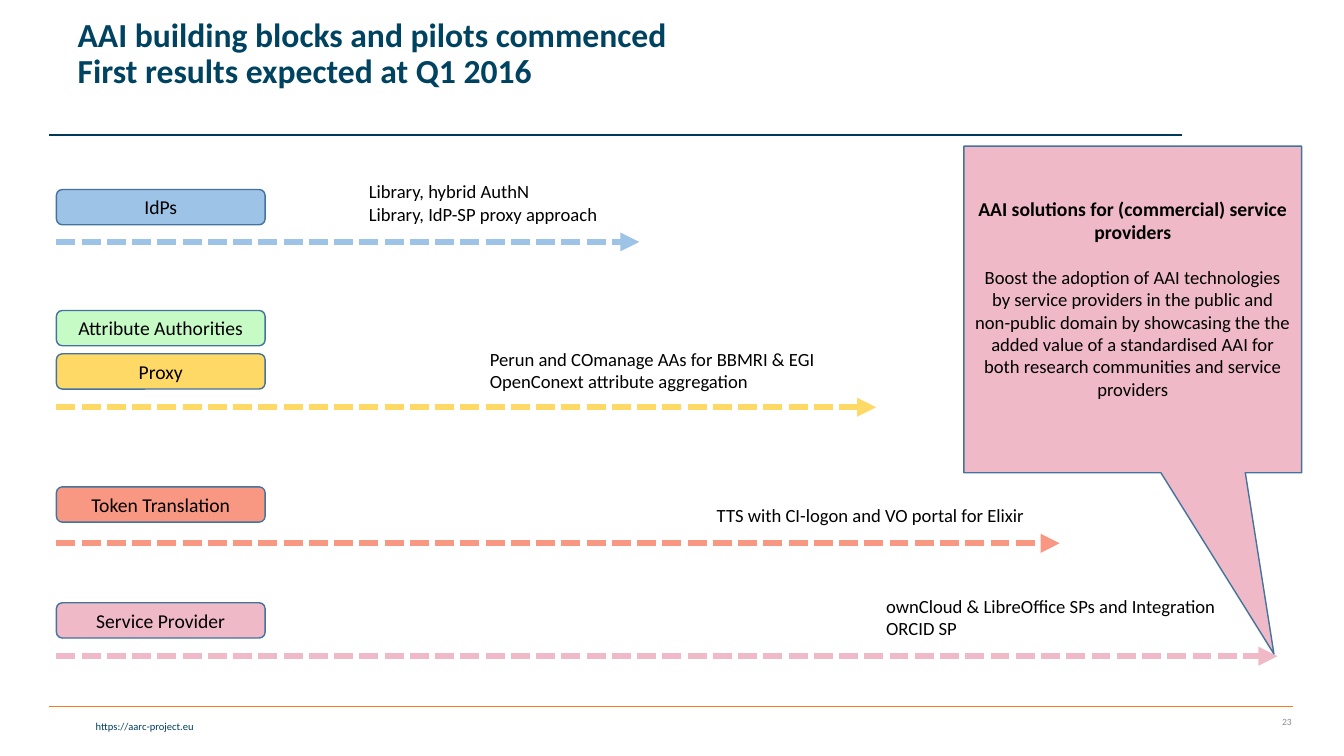
from lxml.etree import SubElement
from pptx import Presentation
from pptx.dml.color import RGBColor
from pptx.enum.dml import MSO_LINE
from pptx.enum.shapes import MSO_CONNECTOR, MSO_SHAPE
from pptx.enum.text import MSO_ANCHOR, PP_ALIGN
from pptx.oxml.ns import qn
from pptx.util import Inches, Pt

COLORS = {
    "navy": "004361", "rule": "003959", "link": "003F5E", "orange": "F57B20",
    "outline": "43739E", "black": "000000", "gray": "8C8C8C", "blue": "9DC3E6",
    "green": "C6FBC6", "yellow": "FFD966", "coral": "F89782", "pink": "F0B9C7",
}
LEFT = 0.56
LABEL_WIDTH, LABEL_HEIGHT = 2.07, 0.35

presentation = Presentation()
presentation.slide_width = Inches(13.33)
presentation.slide_height = Inches(7.5)
slide = presentation.slides.add_slide(presentation.slide_layouts[5])


def write(shape, lines, size, color="black", align=PP_ALIGN.LEFT, bold=False):
    frame = shape.text_frame
    frame.text = "\n".join(lines)
    for paragraph in frame.paragraphs:
        paragraph.alignment = align
        paragraph.font.name = "Calibri"
        paragraph.font.size = Pt(size)
        paragraph.font.bold = bold
        paragraph.font.color.rgb = RGBColor.from_string(COLORS[color])
    return frame


def add_line(left, right, top, color, width):
    line = slide.shapes.add_connector(
        MSO_CONNECTOR.STRAIGHT, Inches(left), Inches(top), Inches(right), Inches(top))
    line.line.color.rgb = RGBColor.from_string(COLORS[color])
    line.line.width = Pt(width)
    SubElement(line._element.spPr, qn("a:effectLst"))
    return line


# Rules above and below the content
add_line(0.49, 12.82, 7.01, "orange", 1)
add_line(0.49, 11.72, 1.34, "rule", 1)

# Title
title = slide.shapes.title
title.left, title.top, title.width, title.height = map(Inches, (0.67, 0.08, 12, 1.25))
frame = write(title, ["AAI building blocks and pilots commenced\vFirst results expected at Q1 2016"],
              24, "navy", bold=True)
frame.word_wrap = True
frame.vertical_anchor = MSO_ANCHOR.TOP
frame.margin_left = frame.margin_right = frame.margin_top = frame.margin_bottom = Inches(0.1)
frame.paragraphs[0].line_spacing = 0.9

# Building block labels: name, top, colour
labels = [
    ("IdPs", 1.88, "blue"),
    ("Attribute Authorities", 3.08, "green"),
    ("Proxy", 3.51, "yellow"),
    ("Token Translation", 4.83, "coral"),
    ("Service Provider", 5.98, "pink"),
]
boxes = [(MSO_SHAPE.ROUNDED_RECTANGLE, (LEFT, top, LABEL_WIDTH, LABEL_HEIGHT), color, [name])
         for name, top, color in labels]

# Timeline arrows: end, height on the slide, colour
for end, top, color in [(6.34, 2.4, "blue"), (8.69, 4.04, "yellow"),
                        (10.51, 5.39, "coral"), (12.67, 6.51, "pink")]:
    arrow = add_line(LEFT, end, top, color, 4.5)
    arrow.line.dash_style = MSO_LINE.SQUARE_DOT
    SubElement(arrow.line._get_or_add_ln(), qn("a:tailEnd"), type="triangle")

# Labels and the callout share one outline style
boxes.append((MSO_SHAPE.RECTANGULAR_CALLOUT, (9.56, 1.45, 3.35, 3.24), "pink", [
    "AAI solutions for (commercial) service providers",
    "Boost the adoption of AAI technologies by service providers in the public and "
    "non-public domain by showcasing the the added value of a standardised AAI for "
    "both research communities and service providers",
]))
for preset, place, color, lines in boxes:
    shape = slide.shapes.add_shape(preset, *map(Inches, place))
    shape.shadow.inherit = False
    shape.fill.solid()
    shape.fill.fore_color.rgb = RGBColor.from_string(COLORS[color])
    shape.line.color.rgb = RGBColor.from_string(COLORS["outline"])
    shape.line.width = Pt(1)
    frame = write(shape, lines, 14, align=PP_ALIGN.CENTER)
    frame.word_wrap = True
    frame.vertical_anchor = MSO_ANCHOR.MIDDLE

# Callout pointer and text, the last box added
shape.adjustments[0], shape.adjustments[1] = 0.418, 1.055
frame.margin_bottom = Inches(0.27)
heading, body = frame.paragraphs
heading.font.bold = True
body.font.size = Pt(13.3)
body.space_before = Pt(16)

# Pilot descriptions: place, lines
pilots = [
    ((3.56, 1.74, 2.49, 0.55), ["Library, hybrid AuthN", "Library, IdP-SP proxy approach"]),
    ((4.76, 3.4, 3.46, 0.55),
     ["Perun and COmanage AAs for BBMRI & EGI", "OpenConext attribute aggregation"]),
    ((7.01, 4.95, 3.28, 0.33), ["TTS with CI-logon and VO portal for Elixir"]),
    ((8.69, 5.85, 3.51, 0.55), ["ownCloud & LibreOffice SPs and Integration", "ORCID SP"]),
]
for place, lines in pilots:
    write(slide.shapes.add_textbox(*map(Inches, place)), lines, 13.3).word_wrap = False

# Footer: web address and slide number
address = slide.shapes.add_textbox(*map(Inches, (0.03, 7.09, 1.99, 0.23)))
write(address, ["https://aarc-project.eu"], 7.5, "link", PP_ALIGN.RIGHT).word_wrap = True
number = slide.shapes.add_textbox(*map(Inches, (12.1, 7.01, 0.81, 0.3)))
frame = write(number, ["23"], 6.8, "gray", PP_ALIGN.RIGHT)
frame.word_wrap = True
frame.vertical_anchor = MSO_ANCHOR.MIDDLE

presentation.save("out.pptx")
